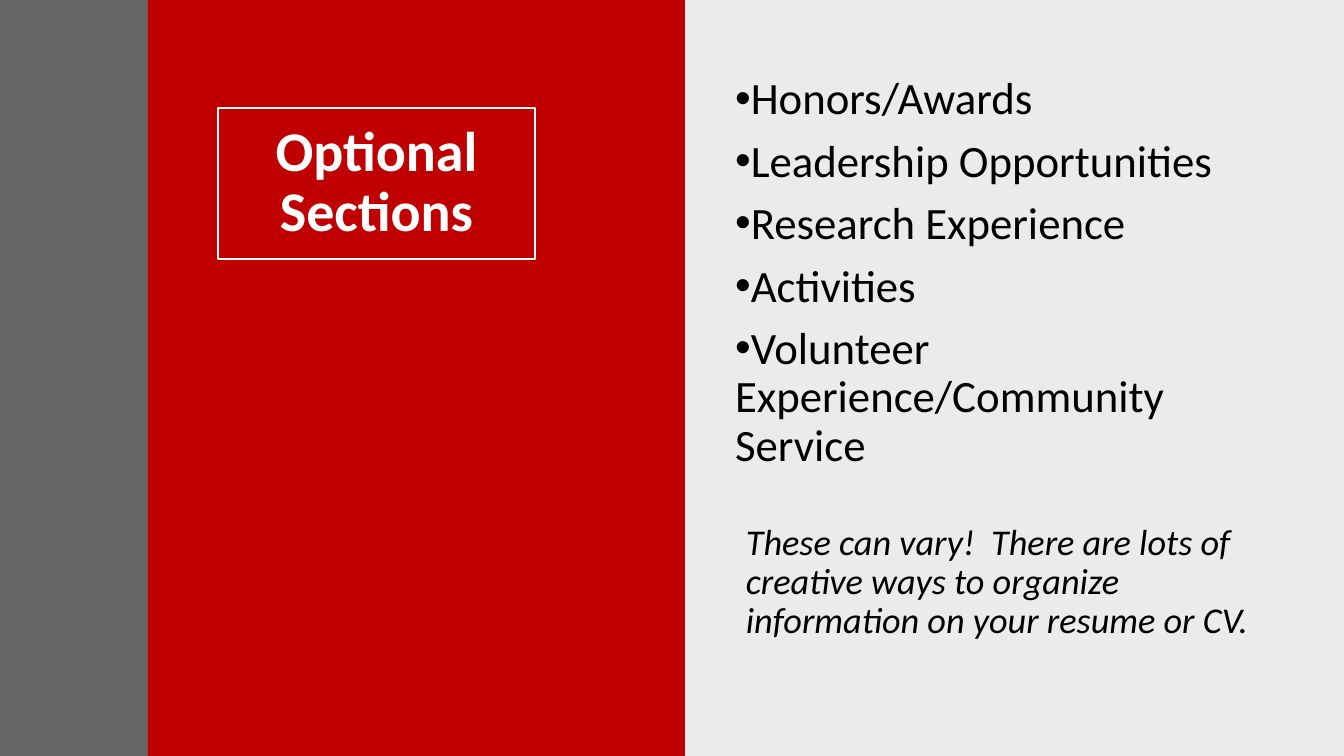
from dataclasses import dataclass

from lxml import etree
from pptx import Presentation
from pptx import util as u
from pptx.dml.color import RGBColor
from pptx.enum import shapes, text
from pptx.oxml.ns import qn

PX = u.Inches(1) / 100.8


@dataclass(frozen=True)
class Theme:
    font: str = "Calibri"
    black: str = "000000"
    white: str = "FFFFFF"
    red: str = "C00000"
    grey: str = "404040"
    title: float = 40
    bullets: float = 32
    note: float = 25.9


THEME = Theme()
SECTIONS = [
    "Honors/Awards",
    "Leadership Opportunities",
    "Research Experience",
    "Activities",
    "Volunteer Experience/Community Service",
]
NOTE = ("These can vary!  There are lots of creative ways to organize "
        "information on your resume or CV.")


def px(n):
    return u.Emu(round(n * PX))


def place(sp, box):
    sp.left, sp.top, sp.width, sp.height = map(px, box)


def add_panel(s, box, color, opacity=100):
    sp = s.shapes.add_shape(shapes.MSO_SHAPE.RECTANGLE, *map(px, box))
    sp.shadow.inherit = False
    sp.fill.solid()
    sp.fill.fore_color.rgb = RGBColor.from_string(color)
    sp.line.fill.background()
    if opacity < 100:
        clr = sp.fill._xPr.find(".//" + qn("a:srgbClr"))
        etree.SubElement(clr, qn("a:alpha"), val=str(opacity * 1000))


def write(sp, lines, size, color, anchor=text.MSO_ANCHOR.TOP, bold=False, italic=False):
    tf = sp.text_frame
    tf.text = "\n".join(lines)
    tf.word_wrap = True
    tf.auto_size = text.MSO_AUTO_SIZE.NONE
    tf.vertical_anchor = anchor
    for p in tf.paragraphs:
        p.line_spacing = 0.9
        p.font.name = THEME.font
        p.font.size = u.Pt(size)
        p.font.bold = bold
        p.font.italic = italic
        p.font.color.rgb = RGBColor.from_string(color)
    return tf.paragraphs


def bring_to_front(s, sp):
    s.shapes._spTree.append(sp._element)


def fill_title(s, box):
    sp = s.shapes.title
    bring_to_front(s, sp)
    place(sp, box)
    sp.line.color.rgb = RGBColor.from_string(THEME.white)
    sp.line.width = u.Pt(2)
    p, = write(sp, ["Optional Sections"], THEME.title, THEME.white,
               anchor=text.MSO_ANCHOR.MIDDLE, bold=True)
    p.alignment = text.PP_ALIGN.CENTER


def fill_list(s, box):
    sp = s.placeholders[1]
    bring_to_front(s, sp)
    place(sp, box)
    for p in write(sp, SECTIONS, THEME.bullets, THEME.black):
        p.space_before = u.Pt(10)
        pPr = p._p.get_or_add_pPr()
        pPr.set("marL", "0")
        pPr.set("indent", str(-u.Inches(0.25)))
        bullet = etree.Element(qn("a:buChar"), char="•")
        pPr.find(qn("a:defRPr")).addprevious(bullet)


def add_note(s, box):
    sp = s.shapes.add_textbox(*map(px, box))
    p, = write(sp, [NOTE], THEME.note, THEME.black, italic=True)
    p.space_after = u.Pt(6)


def add_left_side(s, x, y, w, h):
    add_panel(s, (x, y, 160, h), THEME.grey, opacity=80)
    add_panel(s, (x + 148, y, w - 148, h), THEME.red)
    fill_title(s, (x + 218, y + 108, 317, 151))


def add_right_side(s, x, y, w, h):
    add_panel(s, (x, y, w, h), THEME.black, opacity=8)
    fill_list(s, (x + 53, y + 71, 557, 448))
    add_note(s, (x + 64, y + 519, 557, 166))


def main():
    prs = Presentation()
    prs.slide_width, prs.slide_height = px(1344), px(756)
    s = prs.slides.add_slide(prs.slide_layouts[1])
    add_right_side(s, 672, 0, 672, 756)
    add_left_side(s, 0, 0, 685, 756)
    prs.save("out.pptx")


if __name__ == "__main__":
    main()
